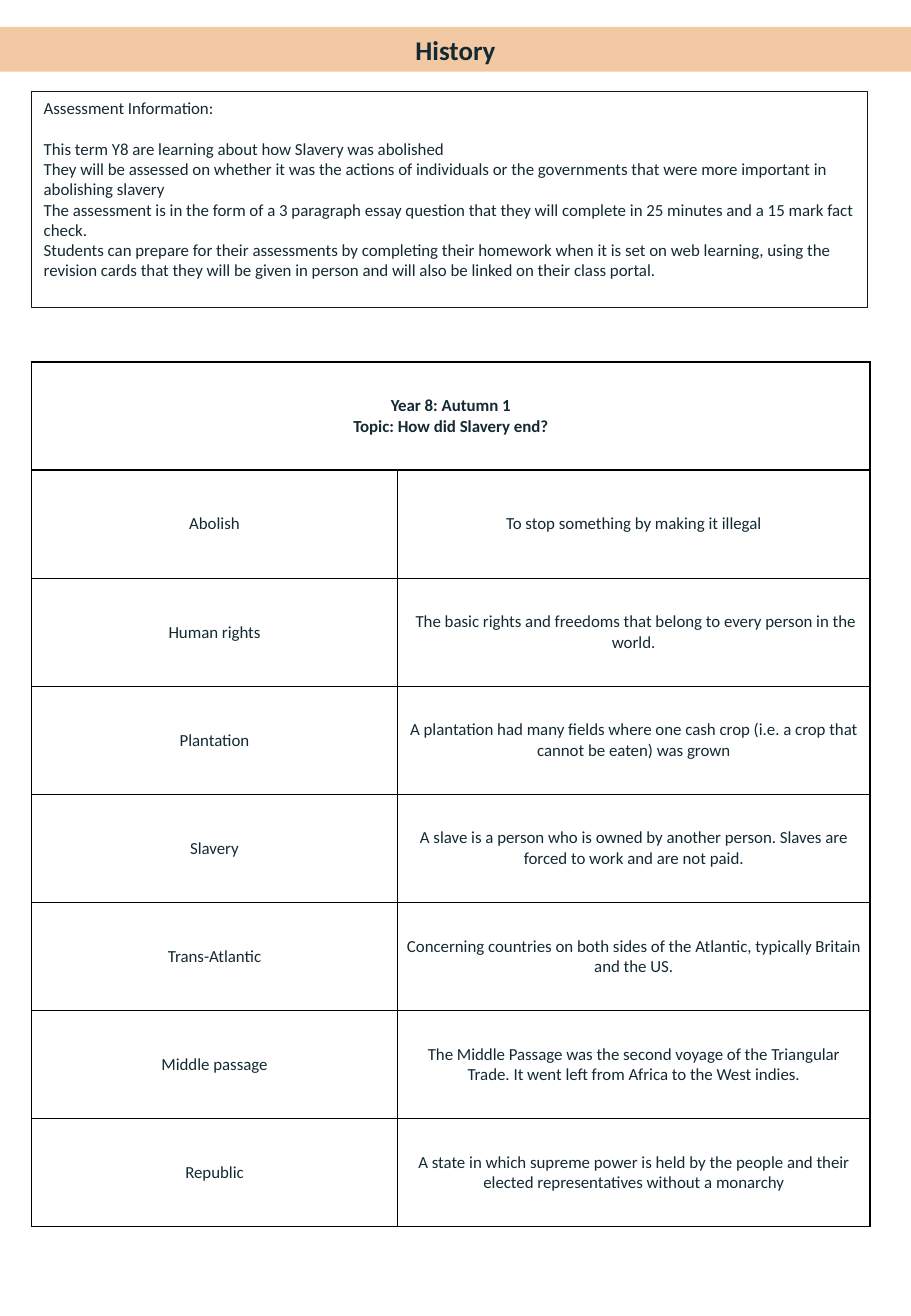
from typing import Any, NamedTuple

from lxml import etree
from pptx import Presentation
from pptx import util as u
from pptx.dml.color import RGBColor
from pptx.enum import text as t
from pptx.oxml import ns

INK = "142A33"
PEACH = "F3C9A4"
FRAME = "181717"
BLACK = "000000"
LEFT = 0.66
ROW = 2.26
COLS = (7.65, 9.88)


class Box(NamedTuple):
    left: float
    top: float
    width: float
    height: float


class Term(NamedTuple):
    word: str
    sense: str


INFO = (
    "Assessment Information:",
    "This term Y8 are learning about how Slavery was abolished",
    "They will be assessed on whether it was the actions of individuals or the "
    "governments that were more important in abolishing slavery",
    "The assessment is in the form of a 3 paragraph essay question that they will "
    "complete in 25 minutes and a 15 mark fact check.",
    "Students can prepare for their assessments by completing their homework when it "
    "is set on web learning, using the revision cards that they will be given in "
    "person and will also be linked on their class portal.",
)
HEAD = ("Year 8: Autumn 1", "Topic: How did Slavery end?")
TERMS = (
    Term("Abolish", "To stop something by making it illegal"),
    Term("Human rights",
         " The basic rights and freedoms that belong to every person in the world."),
    Term("Plantation",
         "A plantation had many fields where one cash crop (i.e. a crop that cannot "
         "be eaten) was grown"),
    Term("Slavery",
         "A slave is a person who is owned by another person. Slaves are forced to "
         "work and are not paid."),
    Term("Trans-Atlantic",
         "Concerning countries on both sides of the Atlantic, typically Britain and "
         "the US."),
    Term("Middle passage",
         "The Middle Passage was the second voyage of the Triangular Trade. It went "
         "left from Africa to the West indies."),
    Term("Republic",
         "A state in which supreme power is held by the people and their elected "
         "representatives without a monarchy"),
)


def color(code: str) -> RGBColor:
    return RGBColor.from_string(code)


def apply(item: Any, form: dict[str, Any]) -> None:
    for name, value in form.items():
        setattr(item, name, value)


def place(shape: Any, box: Box) -> None:
    apply(shape, {name: u.Cm(value) for name, value in box._asdict().items()})


def write(frame: Any, lines: tuple[str, ...], align: Any,
          size: int = 10, bold: bool = False) -> None:
    for i, line in enumerate(lines):
        para = frame.paragraphs[0] if i == 0 else frame.add_paragraph()
        apply(para, {"alignment": align, "space_before": u.Pt(0)})
        run = para.add_run()
        run.text = line
        apply(run.font, {"name": "Calibri", "size": u.Pt(size), "bold": bold})
        run.font.color.rgb = color(INK)


def border(cell: Any) -> None:
    props = cell._tc.get_or_add_tcPr()
    for i, side in enumerate(("lnL", "lnR", "lnT", "lnB")):
        line = etree.Element(ns.qn(f"a:{side}"), w=str(u.Pt(1)))
        fill = etree.SubElement(line, ns.qn("a:solidFill"))
        etree.SubElement(fill, ns.qn("a:srgbClr"), val=BLACK)
        props.insert(i, line)


def draw_title(shape: Any) -> None:
    place(shape, Box(0, 0.56, 19.05, 0.94))
    shape.fill.solid()
    shape.fill.fore_color.rgb = color(PEACH)
    apply(shape.text_frame, {"auto_size": t.MSO_AUTO_SIZE.NONE, "word_wrap": True})
    write(shape.text_frame, ("History",), t.PP_ALIGN.CENTER, 16, True)


def draw_info(shape: Any) -> None:
    place(shape, Box(LEFT, 1.91, 17.48, 4.52))
    shape.line.color.rgb = color(FRAME)
    shape.line.width = u.Pt(0.75)
    frame = shape.text_frame
    apply(frame, {"auto_size": t.MSO_AUTO_SIZE.NONE, "word_wrap": True,
                  "vertical_anchor": t.MSO_ANCHOR.TOP})
    write(frame, INFO, t.PP_ALIGN.LEFT)
    frame.paragraphs[1].space_before = u.Pt(12.2)
    for para in frame.paragraphs:
        props = para._p.get_or_add_pPr()
        props.set("marL", "0")
        props.set("indent", "0")
        etree.SubElement(props, ns.qn("a:buNone"))


def draw_terms(slide: Any) -> None:
    rows = len(TERMS) + 1
    box = Box(LEFT, 7.57, sum(COLS), ROW * rows)
    table = slide.shapes.add_table(rows, len(COLS), *map(u.Cm, box)).table
    apply(table, {"first_row": False, "horz_banding": False})
    for col, width in zip(table.columns, COLS):
        col.width = u.Cm(width)
    for row in table.rows:
        row.height = u.Cm(ROW)
    for cell in table.iter_cells():
        apply(cell, {"vertical_anchor": t.MSO_ANCHOR.MIDDLE,
                     "margin_left": u.Cm(0.18), "margin_right": u.Cm(0.18),
                     "margin_top": 0, "margin_bottom": 0})
        cell.fill.background()
        border(cell)
    top = table.cell(0, 0)
    top.merge(table.cell(0, 1))
    write(top.text_frame, HEAD, t.PP_ALIGN.CENTER, bold=True)
    for i, term in enumerate(TERMS, 1):
        for j, words in enumerate(term):
            write(table.cell(i, j).text_frame, (words,), t.PP_ALIGN.CENTER)


def main() -> None:
    deck = Presentation()
    apply(deck, {"slide_width": u.Cm(19.05), "slide_height": u.Cm(27.51)})
    slide = deck.slides.add_slide(deck.slide_layouts[1])
    draw_title(slide.shapes.title)
    draw_info(slide.placeholders[1])
    draw_terms(slide)
    deck.save("out.pptx")


if __name__ == "__main__":
    main()
